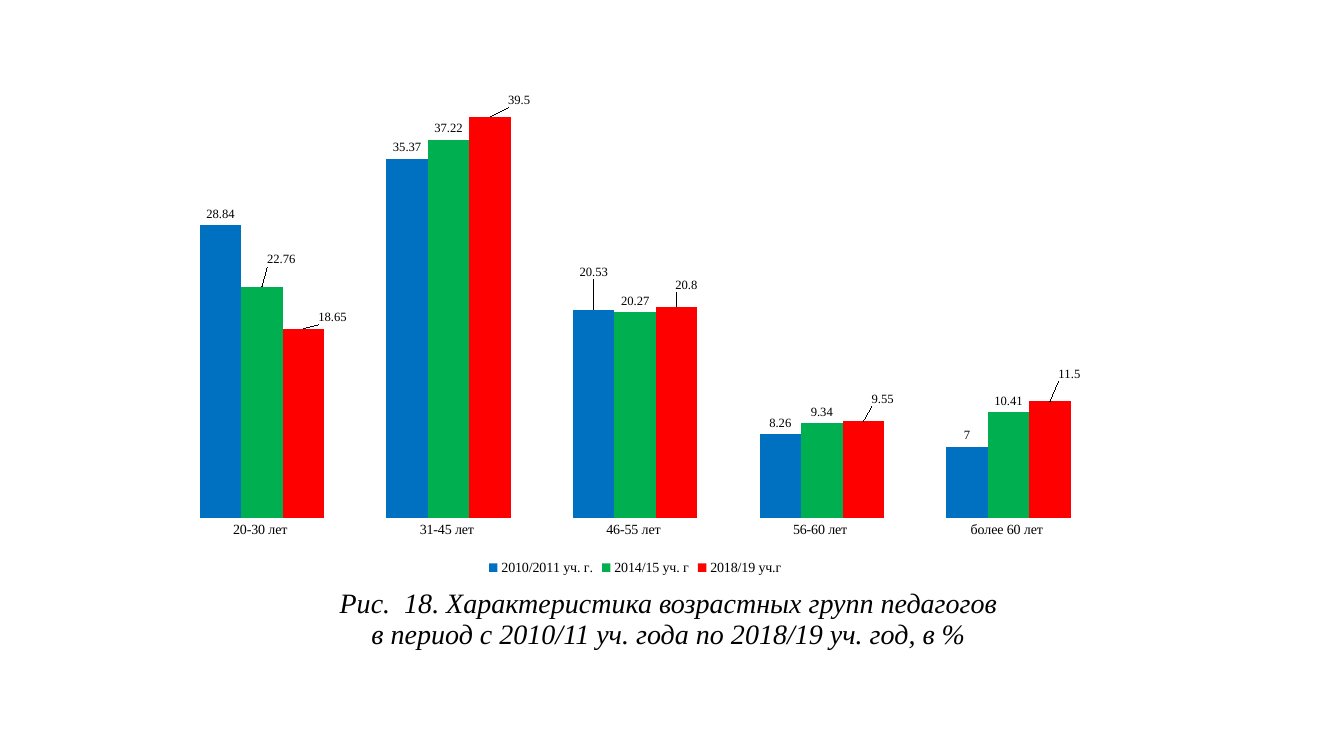
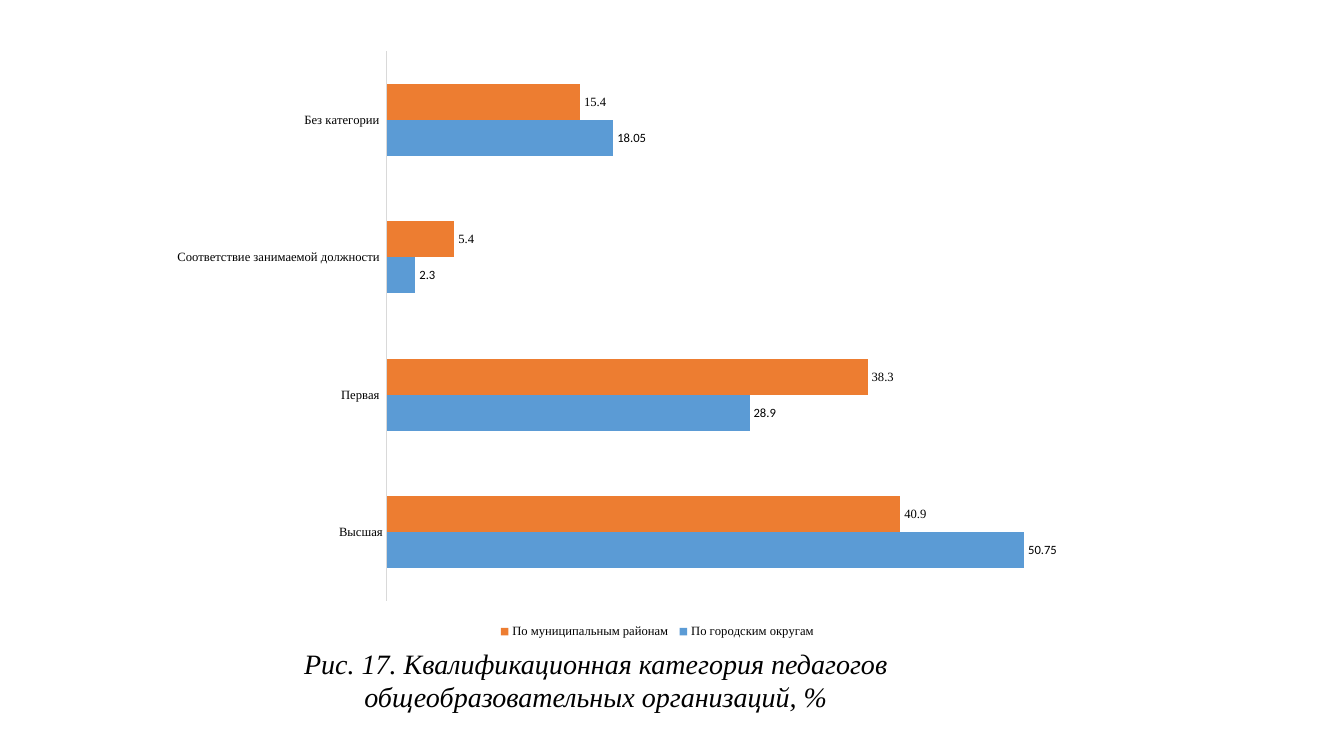
from lxml import etree
from pptx import Presentation
from pptx.chart.data import CategoryChartData
from pptx.dml.color import RGBColor
from pptx.enum.chart import XL_CHART_TYPE, XL_LABEL_POSITION, XL_LEGEND_POSITION, XL_TICK_MARK
from pptx.enum.text import MSO_ANCHOR, PP_ALIGN
from pptx.oxml.ns import qn
from pptx.util import Inches, Pt

COLUMNS = XL_CHART_TYPE.COLUMN_CLUSTERED
BARS = XL_CHART_TYPE.BAR_CLUSTERED
OUTSIDE_END = XL_LABEL_POSITION.OUTSIDE_END
LEGEND_BOTTOM = XL_LEGEND_POSITION.BOTTOM
NO_TICKS = XL_TICK_MARK.NONE
CENTER = PP_ALIGN.CENTER
MIDDLE = MSO_ANCHOR.MIDDLE

SERIF, SANS = "Times New Roman", "Calibri"
BLACK = "000000"
TITLE_ONLY = 5

# Content: "shifts" moves a label by fractions of the chart's width and height
SLIDES = [
    {
        "caption": ["Рис.  18. Характеристика возрастных групп педагогов",
                    "в период с 2010/11 уч. года по 2018/19 уч. год, в %"],
        "caption_box": (0.92, 5.75, 11.42, 0.8),
        "line_spacing": 0.9,
        "chart_box": (1.48, 0.5, 9.64, 5.25),
        "type": COLUMNS, "gap": 150, "maximum": 45,
        "text_size": 10, "axis_line": None,
        "categories": ["20-30 лет ", "31-45 лет ", "46-55 лет ", "56-60 лет ", "более 60 лет "],
        "series": [
            {"name": "2010/2011 уч. г.", "color": "0070C0", "font": SERIF,
             "values": [28.84, 35.37, 20.53, 8.26, 7],
             "shifts": {2: (0, -0.05)}},
            {"name": "2014/15 уч. г", "color": "00B050", "font": SERIF,
             "values": [22.76, 37.22, 20.27, 9.34, 10.41],
             "shifts": {0: (0.02, -0.03)}},
            {"name": "2018/19 уч.г", "color": "FF0000", "font": SERIF,
             "values": [18.65, 39.5, 20.8, 9.55, 11.5],
             "shifts": {0: (0.03, 0), 1: (0.03, -0.01), 2: (0.01, -0.02),
                        3: (0.02, -0.02), 4: (0.02, -0.03)}},
        ],
    },
    {
        "caption": ["Рис. 17. Квалификационная категория педагогов",
                    "общеобразовательных организаций, %"],
        "caption_box": (1.66, 6.36, 8.5, 0.77),
        "line_spacing": 1.0,
        "chart_box": (1.56, 0.39, 9.95, 5.99),
        "type": BARS, "gap": 182, "maximum": 60,
        "text_size": 9, "axis_line": "D9D9D9",
        "categories": ["Высшая", "Первая ", "Соответствие занимаемой должности ", "Без категории "],
        "series": [
            {"name": "По городским округам ", "color": "5B9BD5", "font": SANS,
             "values": [50.75, 28.9, 2.3, 18.05], "shifts": {}},
            {"name": "По муниципальным районам ", "color": "ED7D31", "font": SERIF,
             "values": [40.9, 38.3, 5.4, 15.4], "shifts": {}},
        ],
    },
]


def rgb(color):
    return RGBColor.from_string(color)


def format_font(font, size, name=SERIF, color=BLACK, italic=False):
    font.size = Pt(size)
    font.name = name
    font.bold = False
    font.italic = italic
    font.color.rgb = rgb(color)


def add_caption(slide, lines, box, line_spacing):
    title = slide.shapes.title
    title.left, title.top, title.width, title.height = map(Inches, box)
    frame = title.text_frame
    frame.word_wrap = True
    frame.vertical_anchor = MIDDLE
    frame.text = "\n".join(lines)
    for paragraph in frame.paragraphs:
        paragraph.alignment = CENTER
        paragraph.line_spacing = line_spacing
        paragraph.space_before = Pt(0)
        for run in paragraph.runs:
            format_font(run.font, 20, italic=True)


def shift_labels(labels, shifts):
    """Offset single data labels from their default place."""
    for label in labels.findall(qn("c:dLbl")):
        index = label.find(qn("c:idx"))
        layout = etree.Element(qn("c:layout"))
        manual = etree.SubElement(layout, qn("c:manualLayout"))
        for axis, offset in zip("xy", shifts[int(index.get("val"))]):
            etree.SubElement(manual, qn(f"c:{axis}"), val=str(offset))
        index.addnext(layout)


def format_series(series, content):
    series.format.fill.solid()
    series.format.fill.fore_color.rgb = rgb(content["color"])
    series.invert_if_negative = False
    labels = series.data_labels
    labels.show_value = True
    labels.position = OUTSIDE_END
    format_font(labels.font, 9, content["font"])
    for index in content["shifts"]:
        label = series.points[index].data_label
        label.position = OUTSIDE_END
        format_font(label.font, 9, content["font"])
    shift_labels(labels._element, content["shifts"])


def add_bar_chart(slide, content):
    data = CategoryChartData()
    data.categories = content["categories"]
    for series in content["series"]:
        data.add_series(series["name"], series["values"])
    box = map(Inches, content["chart_box"])
    chart = slide.shapes.add_chart(content["type"], *box, data).chart
    chart.has_title = False
    format_font(chart.font, 10, SANS)

    # Legend
    chart.has_legend = True
    chart.legend.position = LEGEND_BOTTOM
    chart.legend.include_in_layout = False
    format_font(chart.legend.font, content["text_size"])

    # Axes
    category_axis, value_axis = chart.category_axis, chart.value_axis
    category_axis.major_tick_mark = NO_TICKS
    category_axis.minor_tick_mark = NO_TICKS
    format_font(category_axis.tick_labels.font, content["text_size"])
    line = category_axis.format.line
    if content["axis_line"]:
        line.color.rgb = rgb(content["axis_line"])
        line.width = Pt(0.75)
    else:
        line.fill.background()
    value_axis.visible = False
    value_axis.has_major_gridlines = False
    value_axis.minimum_scale = 0
    value_axis.maximum_scale = content["maximum"]

    # Bars and their labels
    plot = chart.plots[0]
    plot.gap_width = content["gap"]
    plot.overlap = 0
    plot.vary_by_categories = False
    for series, series_content in zip(plot.series, content["series"]):
        format_series(series, series_content)


def main():
    presentation = Presentation()
    presentation.slide_width = Inches(13.33)
    presentation.slide_height = Inches(7.5)
    for content in SLIDES:
        slide = presentation.slides.add_slide(presentation.slide_layouts[TITLE_ONLY])
        add_caption(slide, content["caption"], content["caption_box"], content["line_spacing"])
        add_bar_chart(slide, content)
    presentation.save("out.pptx")


if __name__ == "__main__":
    main()
